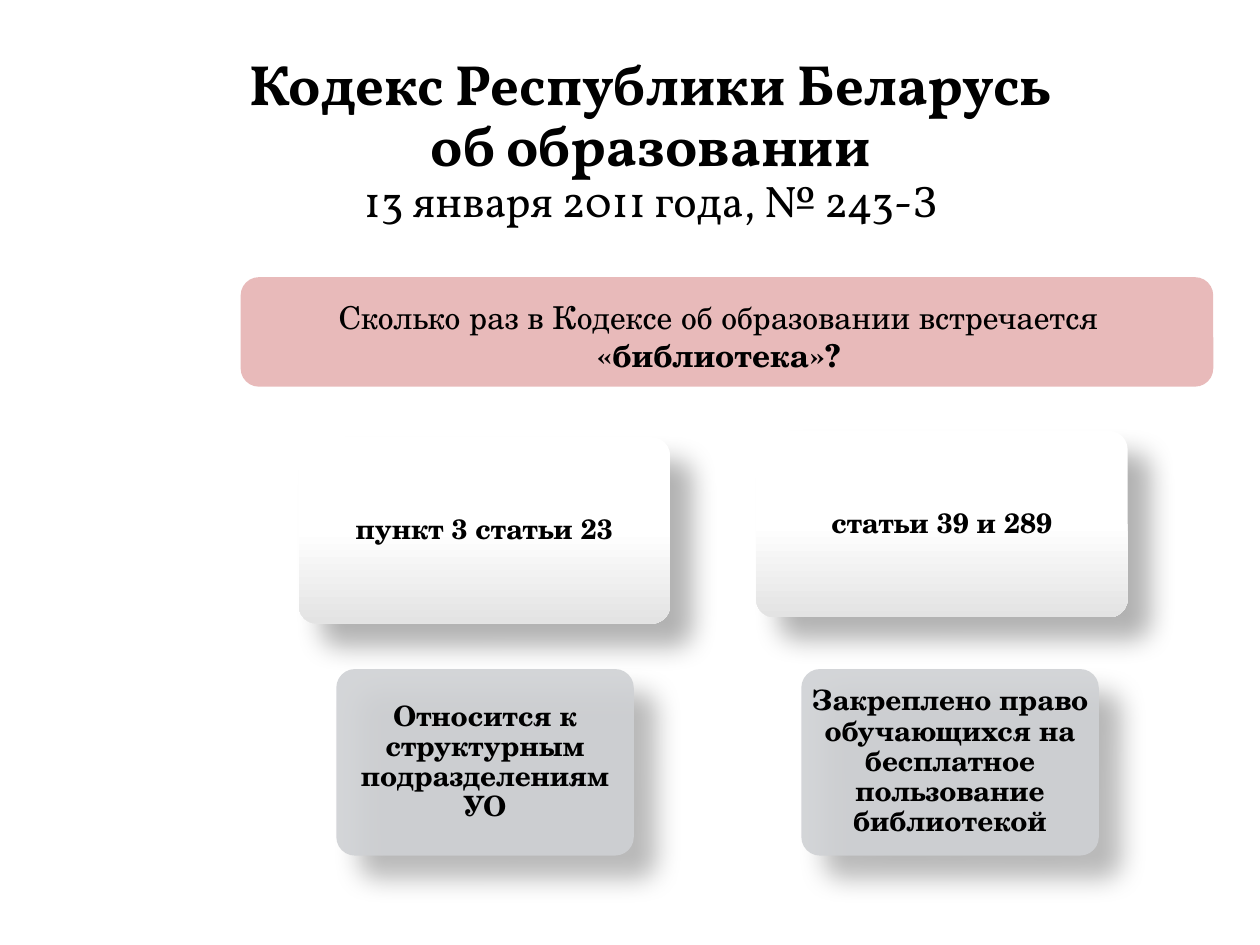
from copy import deepcopy

from lxml import etree
from pptx import Presentation
from pptx.dml.color import RGBColor
from pptx.enum.shapes import MSO_SHAPE
from pptx.enum.text import MSO_ANCHOR, PP_ALIGN
from pptx.oxml.ns import qn
from pptx.util import Pt

ROUND = MSO_SHAPE.ROUNDED_RECTANGLE
MIDDLE = MSO_ANCHOR.MIDDLE
CENTER = PP_ALIGN.CENTER
BLACK = RGBColor(0, 0, 0)
WHITE = RGBColor(255, 255, 255)
SILVER = RGBColor(0xE3, 0xE3, 0xE3)
GREY = RGBColor(0xCF, 0xD1, 0xD4)
PINK = RGBColor(0xE8, 0xBA, 0xBA)
SERIF = "Vollkorn"
SCHOOL = "TeX Gyre Schola"
CARD_H = 106.6
COLUMNS = [
    (170.6, 249.8, 21.6, "пункт 3 статьи 23",
     "Относится к структурным подразделениям УО"),
    (432, 246.2, 25.9, "статьи 39 и 289",
     "Закреплено право обучающихся на бесплатное пользование библиотекой"),
]
NOTE_TOP = 382.3


def style(para, name, size, bold=None):
    """Center a paragraph and set its font."""
    para.alignment = CENTER
    font = para.font
    font.name, font.size, font.bold = name, Pt(size), bold
    font.color.rgb = BLACK


def add_title(slide, x, y, w, h):
    """Fill the title with the name of the code and its date."""
    title = slide.shapes.title
    title.left, title.top, title.width, title.height = map(Pt, (x, y, w, h))
    frame = title.text_frame
    frame.word_wrap = True
    frame.vertical_anchor = MIDDLE
    para = frame.paragraphs[0]
    para.text = "Кодекс Республики Беларусь\vоб образовании\v"
    style(para, SERIF, 32.4)
    para.line_spacing = 0.9
    for run in para.runs:
        run.font.bold = True
    date = para.add_run()
    date.text = "13 января 2011 года, № 243-З"
    date.font.size = Pt(25.2)
    date.font.bold = False


def add_box(slide, x, y, w, h):
    """Add a rounded box with no line and no shadow."""
    box = slide.shapes.add_shape(ROUND, Pt(x), Pt(y), Pt(w), Pt(h))
    box.shadow.inherit = False
    box.line.fill.background()
    return box


def add_banner(slide, x, y, w, h):
    """Add the pink bar with the question."""
    bar = add_box(slide, x, y, w, h)
    bar.fill.solid()
    bar.fill.fore_color.rgb = PINK
    label = slide.shapes.add_textbox(Pt(x + 4.3), Pt(y + 8.6), Pt(w - 18), Pt(51))
    frame = label.text_frame
    frame.word_wrap = True
    para = frame.paragraphs[0]
    style(para, SCHOOL, 18)
    para.add_run().text = "Сколько раз в Кодексе об образовании встречается "
    word = para.add_run()
    word.text = "«библиотека»?"
    word.font.bold = True


def set_alpha(color, share):
    """Set the opacity of a colour element in percent."""
    etree.SubElement(color, qn("a:alpha")).set("val", str(share * 1000))


def cast_shadow(box):
    """Give a box a soft shadow to the lower right."""
    effects = box._element.spPr.find(qn("a:effectLst"))
    shade = etree.SubElement(effects, qn("a:outerShdw"), {
        "blurRad": str(Pt(15)), "dist": str(Pt(18)),
        "dir": str(45 * 60000), "algn": "tl", "rotWithShape": "0"})
    color = etree.SubElement(shade, qn("a:srgbClr"), {"val": str(BLACK)})
    set_alpha(color, 30)


def add_card(slide, x, y, w, text):
    """Add a shadowed card with bold centred text."""
    card = add_box(slide, x, y, w, CARD_H)
    card.adjustments[0] = 0.1
    cast_shadow(card)
    frame = card.text_frame
    frame.word_wrap = True
    frame.vertical_anchor = MIDDLE
    frame.margin_left = frame.margin_right = Pt(2.2)
    frame.margin_top = frame.margin_bottom = Pt(1.4)
    para = frame.paragraphs[0]
    para.text = text
    style(para, SCHOOL, 16, True)
    para.line_spacing = 0.9
    return card


def shade_card(card):
    """Fill a card with white that fades to silver at its foot."""
    fill = card.fill
    fill.gradient()
    fill.gradient_angle = 270
    stops = card._element.spPr.find(qn("a:gradFill")).find(qn("a:gsLst"))
    stops.insert(1, deepcopy(stops[0]))
    for stop, place, color in zip(fill.gradient_stops, (0, 0.5, 1),
                                  (WHITE, WHITE, SILVER)):
        stop.position = place
        stop.color.rgb = color


def tint_note(note):
    """Fill a note with slightly clear grey."""
    note.fill.solid()
    note.fill.fore_color.rgb = GREY
    fill = note._element.spPr.find(qn("a:solidFill"))
    set_alpha(fill[0], 90)


def add_column(slide, x, y, shift, head, text):
    """Add a heading card with its note below."""
    shade_card(add_card(slide, x, y, 212.4, head))
    tint_note(add_card(slide, x + shift, NOTE_TOP, 170, text))


def main():
    """Build the slide and save it."""
    deck = Presentation()
    deck.slide_width, deck.slide_height = Pt(720), Pt(540)
    slide = deck.slides.add_slide(deck.slide_layouts[5])
    add_title(slide, 49.7, 28.8, 644.4, 104.4)
    add_banner(slide, 137.5, 158.4, 555.8, 62.6)
    for column in COLUMNS:
        add_column(slide, *column)
    deck.save("out.pptx")


if __name__ == "__main__":
    main()
